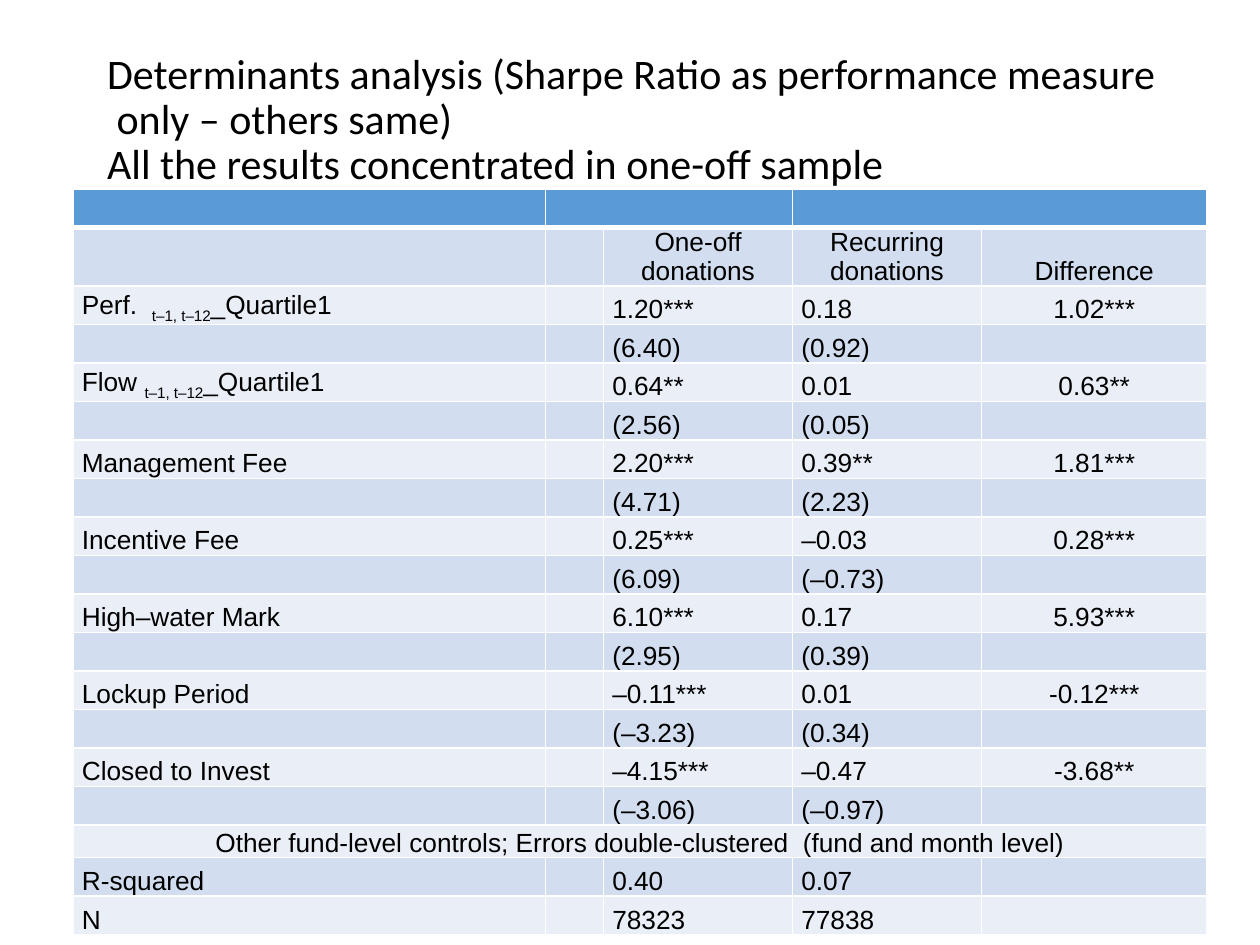
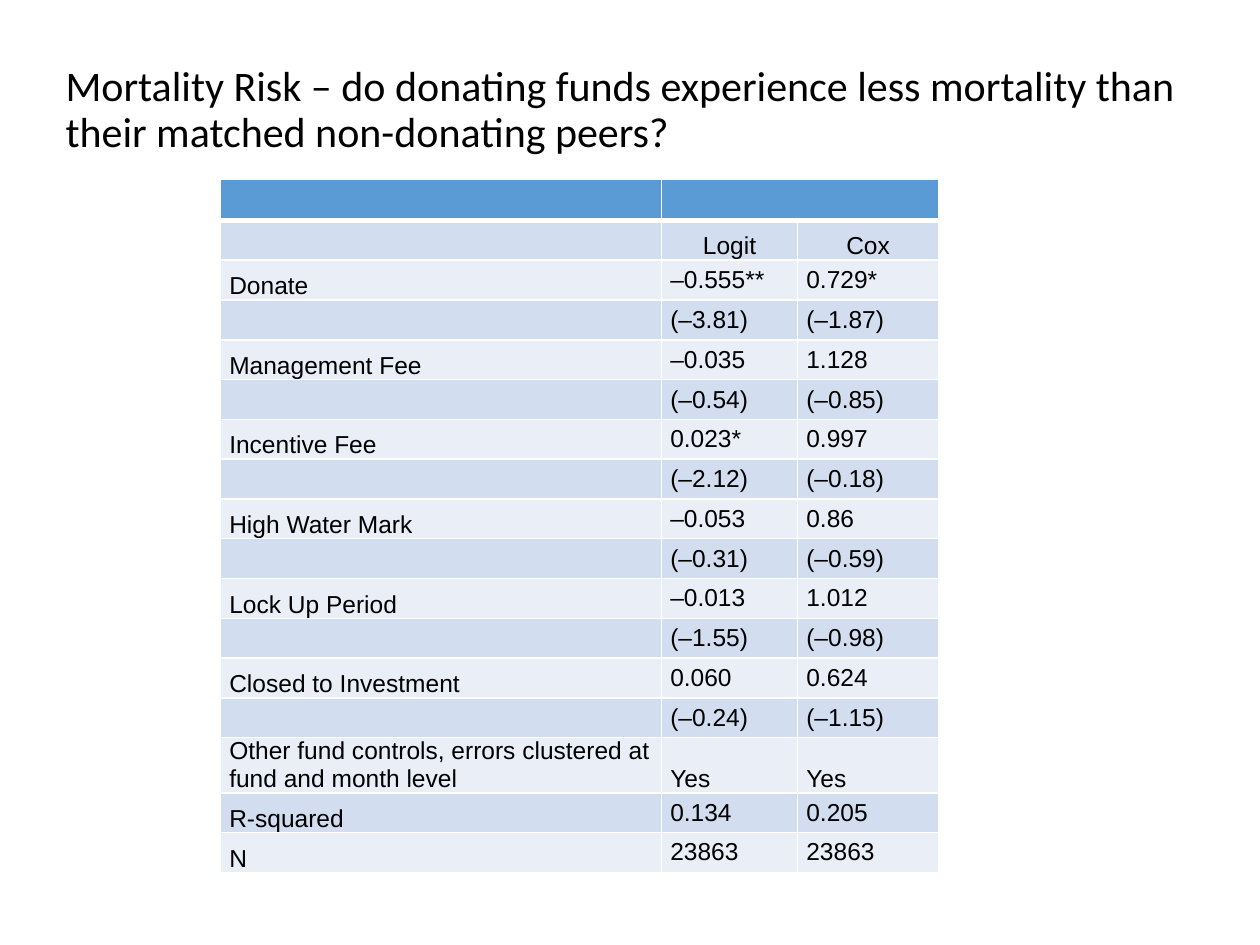
from lxml import etree
from pptx import Presentation
from pptx.dml.color import RGBColor
from pptx.enum.text import MSO_ANCHOR, MSO_AUTO_SIZE, PP_ALIGN
from pptx.oxml.ns import qn
from pptx.util import Inches, Pt

BOTTOM, MIDDLE = MSO_ANCHOR.BOTTOM, MSO_ANCHOR.MIDDLE
LEFT, CENTER = PP_ALIGN.LEFT, PP_ALIGN.CENTER
NO_AUTOFIT = MSO_AUTO_SIZE.NONE

BLACK = RGBColor(0x00, 0x00, 0x00)
WHITE = RGBColor(0xFF, 0xFF, 0xFF)
HEADER_BLUE = RGBColor(0x5B, 0x9B, 0xD5)
DARK_BAND = RGBColor(0xD2, 0xDE, 0xEF)
LIGHT_BAND = RGBColor(0xEA, 0xEF, 0xF7)
TITLE_FONT, TABLE_FONT = "Calibri", "Arial"
TITLE_SIZE = (9.17, 1.42)
LAG = "t–1, t–12"  # set as a subscript inside labels

# Content: each variable has its label, coefficients and t-statistics
DETERMINANTS = [
    (f"Perf.  {LAG}_Quartile1", ["1.20***", "0.18", "1.02***"], ["(6.40)", "(0.92)"]),
    (f"Flow {LAG}_Quartile1", ["0.64**", "0.01", "0.63**"], ["(2.56)", "(0.05)"]),
    ("Management Fee", ["2.20***", "0.39**", "1.81***"], ["(4.71)", "(2.23)"]),
    ("Incentive Fee", ["0.25***", "–0.03", "0.28***"], ["(6.09)", "(–0.73)"]),
    ("High–water Mark", ["6.10***", "0.17", "5.93***"], ["(2.95)", "(0.39)"]),
    ("Lockup Period", ["–0.11***", "0.01", "-0.12***"], ["(–3.23)", "(0.34)"]),
    ("Closed to Invest", ["–4.15***", "–0.47", "-3.68**"], ["(–3.06)", "(–0.97)"]),
]
MORTALITY = [
    ("Donate", ["‒0.555**", "0.729*"], ["(‒3.81)", "(‒1.87)"]),
    ("Management Fee", ["‒0.035", "1.128"], ["(‒0.54)", "(‒0.85)"]),
    ("Incentive Fee", ["0.023*", "0.997"], ["(‒2.12)", "(‒0.18)"]),
    ("High Water Mark", ["‒0.053", "0.86"], ["(‒0.31)", "(‒0.59)"]),
    ("Lock Up Period", ["‒0.013", "1.012"], ["(‒1.55)", "(‒0.98)"]),
    ("Closed to Investment", ["0.060", "0.624"], ["(‒0.24)", "(‒1.15)"]),
]
SLIDES = [
    dict(
        title="Determinants analysis (Sharpe Ratio as performance measure\v"
              " only – others same)\vAll the results concentrated in one-off sample",
        title_at=(0.75, 0.25),
        table_at=(0.58, 1.5),
        columns=[3.75, 0.46, 1.5, 1.5, 1.79],
        first_value=2,
        heads=["One-off donations", "Recurring donations", "Difference"],
        variables=DETERMINANTS,
        controls=("Other fund-level controls; Errors double-clustered"
                  "  (fund and month level)", []),
        summary=[("R-squared", ["0.40", "0.07"]), ("N", ["78323", "77838"])],
        header_spans=[(1, 2), (3, 4)],
        wide_controls=True,
        centred_columns=[4],
        value_anchor=BOTTOM,
        font_size=15,
        row_points=20.25, header_points=20.25, controls_points=18.75,
    ),
    dict(
        title="Mortality Risk – do donating funds experience less mortality"
              " than their matched non-donating peers?",
        title_at=(0.42, 0.17),
        table_at=(1.75, 1.42),
        columns=[3.5, 1.08, 1.12],
        first_value=1,
        heads=["Logit", "Cox"],
        variables=MORTALITY,
        controls=("Other fund controls, errors clustered at fund and month level",
                  ["Yes", "Yes"]),
        summary=[("R-squared", ["0.134", "0.205"]), ("N", ["23863", "23863"])],
        header_spans=[(1, 2)],
        wide_controls=False,
        centred_columns=[],
        value_anchor=MIDDLE,
        font_size=14,
        row_points=22.75, header_points=23.75, controls_points=22.75,
    ),
]


def table_rows(content):
    """Lay the content out as (label, values) for every table row."""
    rows = [("", []), ("", content["heads"])]
    for label, coefficients, t_stats in content["variables"]:
        rows += [(label, coefficients), ("", t_stats)]
    return rows + [content["controls"]] + content["summary"]


def add_title(slide, content):
    title = slide.shapes.title
    title.left, title.top = map(Inches, content["title_at"])
    title.width, title.height = map(Inches, TITLE_SIZE)
    frame = title.text_frame
    frame.text = content["title"]
    frame.auto_size = NO_AUTOFIT
    frame.word_wrap = True
    frame.vertical_anchor = MIDDLE
    paragraph = frame.paragraphs[0]
    paragraph.alignment = LEFT
    paragraph.line_spacing = 0.9
    for run in paragraph.runs:
        run.font.name, run.font.size = TITLE_FONT, Pt(TITLE_SIZE_POINTS)
        run.font.color.rgb = BLACK


TITLE_SIZE_POINTS = 24


def style_cell(cell, fill, bottom_points):
    """White borders, band fill and tight margins."""
    properties = cell._tc.get_or_add_tcPr()
    for side, points in (("L", 1), ("R", 1), ("T", 1), ("B", bottom_points)):
        line = etree.SubElement(properties, qn(f"a:ln{side}"), w=str(Pt(points)))
        solid = etree.SubElement(line, qn("a:solidFill"))
        etree.SubElement(solid, qn("a:srgbClr"), val=str(WHITE))
    cell.fill.solid()
    cell.fill.fore_color.rgb = fill
    cell.margin_left = cell.margin_right = Inches(0.07)
    cell.margin_top = cell.margin_bottom = 0


def write_cell(cell, text, size, alignment, anchor):
    cell.vertical_anchor = anchor
    paragraph = cell.text_frame.paragraphs[0]
    paragraph.alignment = alignment
    before, lag, after = text.partition(LAG)
    for part in filter(None, (before, lag, after)):
        run = paragraph.add_run()
        run.text = part
        run.font.name, run.font.size = TABLE_FONT, Pt(size)
        run.font.color.rgb = BLACK
        if part == LAG:
            run._r.get_or_add_rPr().set("baseline", "-25000")


def add_results(slide, content):
    rows, columns = table_rows(content), content["columns"]
    controls_row = rows.index(content["controls"])
    heights = [Pt(content["row_points"])] * len(rows)
    heights[0] = Pt(content["header_points"])
    heights[controls_row] = Pt(content["controls_points"])
    left, top = map(Inches, content["table_at"])
    table = slide.shapes.add_table(len(rows), len(columns), left, top,
                                   Inches(sum(columns)), sum(heights)).table
    for column, width in zip(table.columns, columns):
        column.width = Inches(width)

    # Bands and text
    for r, (label, values) in enumerate(rows):
        table.rows[r].height = heights[r]
        fill = HEADER_BLUE if r == 0 else DARK_BAND if r % 2 else LIGHT_BAND
        texts = [label] + [""] * (content["first_value"] - 1) + values
        for c in range(len(columns)):
            cell = table.cell(r, c)
            style_cell(cell, fill, 1 if r else 3)
            if c >= len(texts) or not texts[c]:
                continue
            wide = content["wide_controls"] and r == controls_row
            centred = r == 1 or wide or c in content["centred_columns"]
            low = c == 0 or r in (1, controls_row)
            write_cell(cell, texts[c], content["font_size"],
                       CENTER if centred else LEFT,
                       BOTTOM if low else content["value_anchor"])

    # Merged cells
    for first, last in content["header_spans"]:
        table.cell(0, first).merge(table.cell(0, last))
    if content["wide_controls"]:
        table.cell(controls_row, 0).merge(table.cell(controls_row, len(columns) - 1))


def main():
    deck = Presentation()
    deck.slide_width, deck.slide_height = Inches(10), Inches(7.5)
    title_only = deck.slide_layouts[5]
    for content in SLIDES:
        slide = deck.slides.add_slide(title_only)
        add_title(slide, content)
        add_results(slide, content)
    deck.save("out.pptx")


if __name__ == "__main__":
    main()
